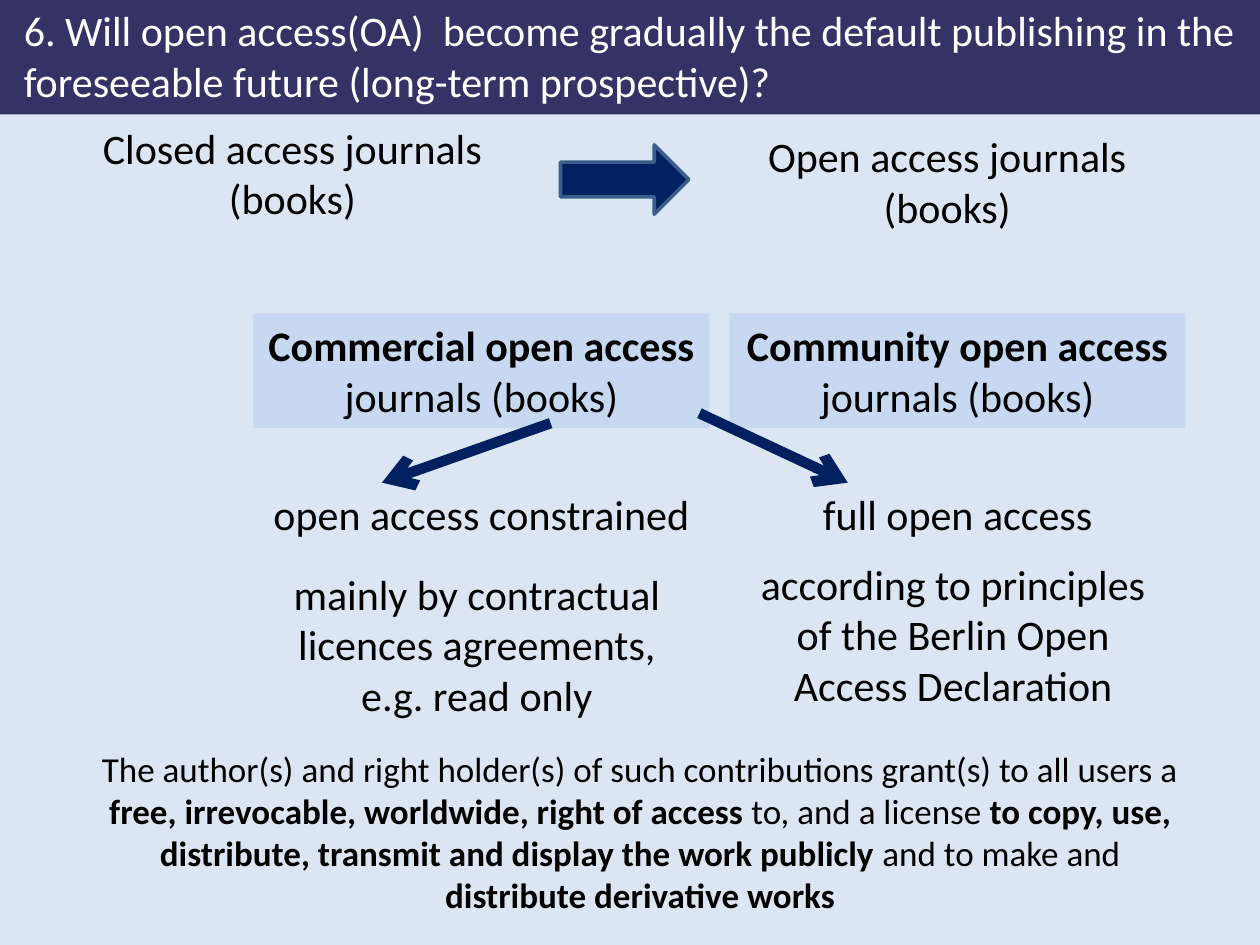
import pptx
import pptx.util
import pptx.dml.color
import pptx.enum.shapes
import pptx.enum.text
import pptx.oxml.ns
import lxml.etree

Cm = pptx.util.Cm
Pt = pptx.util.Pt
KIND = pptx.enum.shapes.MSO_SHAPE
ALIGN = pptx.enum.text.PP_ALIGN
ANCHOR = pptx.enum.text.MSO_ANCHOR
NAVY = "002060"


def tint(code):
    return pptx.dml.color.RGBColor.from_string(code)


def apply(item, form):
    for key, value in form.items():
        setattr(item, key, value)


def paint(fill, code):
    fill.solid()
    fill.fore_color.rgb = tint(code)


def block(slide, box, kind, fill):
    shape = slide.shapes.add_shape(kind, *map(Cm, box))
    shape.shadow.inherit = False
    paint(shape.fill, fill)
    shape.line.fill.background()
    return shape


def write(shape, runs, size=24, color="000000", align=ALIGN.CENTER, **frame):
    text = shape.text_frame
    apply(text, {"word_wrap": True, "vertical_anchor": ANCHOR.TOP, **frame})
    para = text.paragraphs[0]
    para.alignment = align
    for words, bold in runs:
        run = para.add_run()
        run.text = words
        apply(run.font, {"name": "Calibri", "size": Pt(size), "bold": bold})
        run.font.color.rgb = tint(color)


def label(slide, box, words):
    write(slide.shapes.add_textbox(*map(Cm, box)), [(words, False)])


def branch(slide, start, end):
    line = slide.shapes.add_connector(
        pptx.enum.shapes.MSO_CONNECTOR.STRAIGHT, *map(Cm, start + end))
    line.line.width = Pt(6)
    line.line.color.rgb = tint(NAVY)
    qn = pptx.oxml.ns.qn
    lxml.etree.SubElement(line.line._get_or_add_ln(), qn("a:tailEnd"), type="arrow")
    lxml.etree.SubElement(line._element.spPr, qn("a:effectLst"))


def title(slide, box):
    bar = block(slide, box, KIND.RECTANGLE, "333366")
    words = ("6. Will open access(OA)  become gradually the default publishing "
             "in the foreseeable future (long-term prospective)?")
    write(bar, [(words, False)], color="FFFFFF", align=ALIGN.LEFT,
          vertical_anchor=ANCHOR.MIDDLE, margin_left=Cm(0.48),
          margin_right=0, margin_top=0, margin_bottom=0)


def shift(slide, box):
    left, top, width, height = box
    wide = 9.19
    label(slide, (left, top, wide, height), "Closed access journals (books)")
    arrow = block(slide, (left + 10, top + 0.58, 2.59, 1.4), KIND.RIGHT_ARROW, NAVY)
    arrow.line.color.rgb = tint("3A5F8C")
    arrow.line.width = Pt(2)
    label(slide, (left + width - wide, top + 0.17, wide, height),
          "Open access journals (books)")


def model(slide, box, name, grade, terms, drop):
    left, top, width, height = box
    head = block(slide, (left, top, width, 2.31), KIND.RECTANGLE, "C6D9F1")
    write(head, [(name + " ", True), ("journals (books)", False)])
    label(slide, (left, top + 3.41, width, 1.27), grade)
    label(slide, (left + 0.2, top + drop, width - 0.58, height - drop), terms)


def grant(slide, box):
    write(slide.shapes.add_textbox(*map(Cm, box)), [
        ("The author(s) and right holder(s) of such contributions grant(s) to all users a ", False),
        ("free, irrevocable, worldwide, right of access ", True),
        ("to, and a license ", False),
        ("to copy, use, distribute, transmit and display the work publicly ", True),
        ("and to make and ", False),
        ("distribute derivative works", True),
    ], size=20)


def main():
    deck = pptx.Presentation()
    apply(deck, {"slide_width": Cm(25.4), "slide_height": Cm(19.05)})
    slide = deck.slides.add_slide(deck.slide_layouts[6])
    paint(slide.background.fill, "DCE6F2")
    title(slide, (0, -0.08, 25.4, 2.39))
    shift(slide, (1.3, 2.34, 22.39, 2.31))
    model(slide, (5.11, 6.32, 9.19, 8.34), "Commercial open access",
          "open access constrained",
          "mainly by contractual licences agreements, e.g. read only", 5.01)
    model(slide, (14.71, 6.32, 9.19, 8.14), "Community open access",
          "full open access",
          "according to principles of the Berlin Open Access Declaration", 4.81)
    branch(slide, (11.1, 8.53), (7.7, 9.73))
    branch(slide, (14.1, 8.33), (17.09, 9.73))
    grant(slide, (1.5, 14.94, 22.81, 3.68))
    deck.save("out.pptx")


if __name__ == "__main__":
    main()
